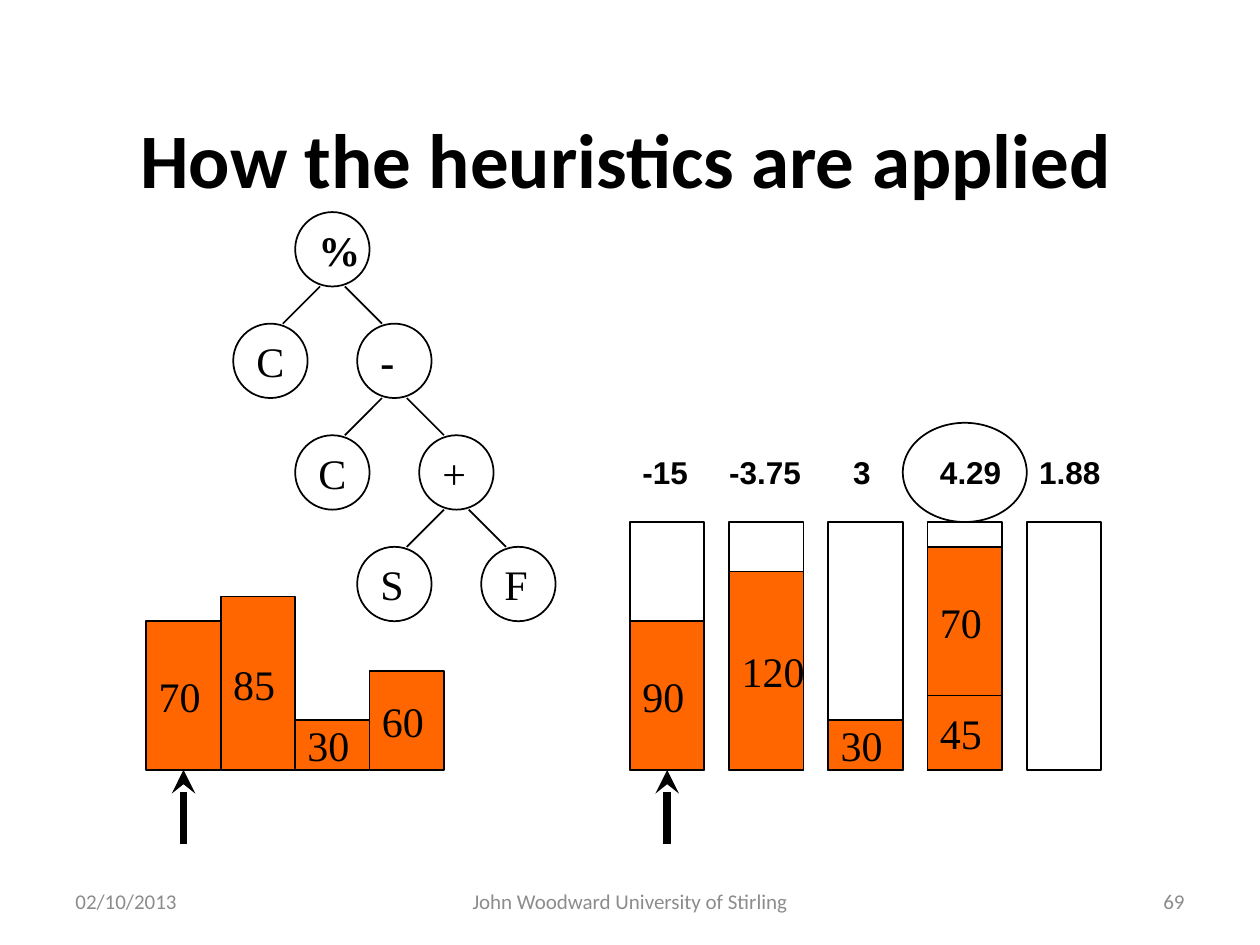
from lxml import etree
from pptx import Presentation
from pptx.dml.color import RGBColor
from pptx.enum.shapes import MSO_CONNECTOR, MSO_SHAPE
from pptx.enum.text import MSO_ANCHOR, MSO_AUTO_SIZE, PP_ALIGN
from pptx.oxml.ns import qn
from pptx.util import Pt

RECT, OVAL = MSO_SHAPE.RECTANGLE, MSO_SHAPE.OVAL
STRAIGHT = MSO_CONNECTOR.STRAIGHT
MIDDLE, TOP = MSO_ANCHOR.MIDDLE, MSO_ANCHOR.TOP
LEFT, CENTER, RIGHT = PP_ALIGN.LEFT, PP_ALIGN.CENTER, PP_ALIGN.RIGHT
GROW = MSO_AUTO_SIZE.SHAPE_TO_FIT_TEXT

COLORS = {"ink": "000000", "paper": "FFFFFF", "item": "FF6600", "footer": "8C8C8C"}

UNIT = 14.17
SIZE = 3 * UNIT
BASE = 440
BIN_HEIGHT = 10 * UNIT
BIN_LEFT, BIN_STEP = 360, 4 * UNIT
QUEUE_LEFT = 83.6
TREE_LEFT, TREE_TOP = 168.7, 121.2
COL_STEP, ROW_STEP = 2.5 * UNIT, 4.5 * UNIT

QUEUE = [("70", 6), ("85", 7), ("30", 2), ("60", 4)]
BINS = [
    ("-15", 0, 40.3, [("90", 6)]),
    ("-3.75", -UNIT / 2, 55.4, [("120", 8)]),
    ("3", UNIT / 2, 24.5, [("30", 2)]),
    ("4.29", 0, 49.7, [("45", 3), ("70", 6)]),
    ("1.88", 0, 49.7, []),
]
BEST = 3
NODES = [
    ("%", 0, 0, True), ("C", -1, 1, False), ("-", 1, 1, True), ("C", 0, 2, False),
    ("+", 2, 2, False), ("S", 1, 3, False), ("F", 3, 3, False),
]
PARENTS = [(0, 0), (1, 1), (2, 2)]
FOOTERS = [
    ("02/10/2013", 36, 168, LEFT),
    ("John Woodward University of Stirling", 246, 228, CENTER),
    ("69", 516, 168, RIGHT),
]


def rgb(name):
    return RGBColor.from_string(COLORS[name])


def write(sp, text, font, size, color="ink", bold=False, align=LEFT, anchor=MIDDLE, wrap=False):
    tf = sp.text_frame
    tf.word_wrap = wrap
    tf.vertical_anchor = anchor
    p = tf.paragraphs[0]
    p.text = text
    p.alignment = align
    p.font.name, p.font.size, p.font.bold = font, Pt(size), bold
    p.font.color.rgb = rgb(color)


def add_outline(s, kind, x, y, w, h, fill=None, text="", bold=False):
    sp = s.shapes.add_shape(kind, Pt(x), Pt(y), Pt(w), Pt(h))
    sp.shadow.inherit = False
    if fill:
        sp.fill.solid()
        sp.fill.fore_color.rgb = rgb(fill)
    else:
        sp.fill.background()
    sp.line.color.rgb = rgb("ink")
    sp.line.width = Pt(1)
    if text:
        write(sp, text, "Times New Roman", 24, bold=bold)
    return sp


def add_line(s, x1, y1, x2, y2, width=1):
    line = s.shapes.add_connector(STRAIGHT, Pt(x1), Pt(y1), Pt(x2), Pt(y2))
    line.line.color.rgb = rgb("ink")
    line.line.width = Pt(width)
    etree.SubElement(line._element.spPr, qn("a:effectLst"))
    return line


def add_pointer(s, bar, x):
    center = x + SIZE / 2
    line = add_line(s, center, BASE + SIZE, center, BASE, 4.5)
    line.end_connect(bar, 2)
    etree.SubElement(line.line._get_or_add_ln(), qn("a:tailEnd"), type="stealth")


def add_text(s, text, x, y, w, h, **style):
    sp = s.shapes.add_textbox(Pt(x), Pt(y), Pt(w), Pt(h))
    write(sp, text, **style)
    return sp


def add_stack(s, x, items):
    y = BASE
    bars = []
    for text, units in items:
        y -= units * UNIT
        bars.append(add_outline(s, RECT, x, y, SIZE, units * UNIT, "item", text))
    return bars


def add_queue(s):
    bars = [add_stack(s, QUEUE_LEFT + i * SIZE, [item])[0] for i, item in enumerate(QUEUE)]
    add_pointer(s, bars[0], QUEUE_LEFT)


def add_bins(s):
    top = BASE - BIN_HEIGHT
    for i, (score, shift, width, items) in enumerate(BINS):
        x = BIN_LEFT + i * BIN_STEP
        add_outline(s, RECT, x, top, SIZE, BIN_HEIGHT, "paper")
        bars = add_stack(s, x, items)
        if i == 0:
            add_pointer(s, bars[0], x)
        sp = add_text(s, score, x + shift, 255.6, width, 28.8,
                      font="Arial", size=18, bold=True, anchor=TOP)
        sp.text_frame.auto_size = GROW
    x = BIN_LEFT + BEST * BIN_STEP - UNIT
    add_outline(s, OVAL, x, top - 4 * UNIT, 5 * UNIT, 4 * UNIT)


def add_tree(s):
    for col, row in PARENTS:
        center = TREE_LEFT + col * COL_STEP + SIZE / 2
        bottom = TREE_TOP + row * ROW_STEP + SIZE
        for side in (-1, 1):
            add_line(s, center + side * UNIT / 2, bottom,
                     center + side * 2 * UNIT, bottom + ROW_STEP - SIZE)
    for text, col, row, bold in NODES:
        add_outline(s, OVAL, TREE_LEFT + col * COL_STEP, TREE_TOP + row * ROW_STEP,
                    SIZE, SIZE, "paper", text, bold)


def add_title(s, text):
    sp = s.shapes.title
    sp.left, sp.top, sp.width, sp.height = Pt(33.84), Pt(36), Pt(648), Pt(108)
    write(sp, text, "Calibri", 44, bold=True, align=CENTER, wrap=True)


def main():
    prs = Presentation()
    prs.slide_width, prs.slide_height = Pt(720), Pt(540)
    s = prs.slides.add_slide(prs.slide_layouts[5])
    add_title(s, "How the heuristics are applied")
    add_bins(s)
    add_queue(s)
    add_tree(s)
    for text, x, width, align in FOOTERS:
        add_text(s, text, x, 500.5, width, 28.75, font="Calibri", size=12,
                 color="footer", align=align, wrap=True)
    prs.save("out.pptx")


if __name__ == "__main__":
    main()
